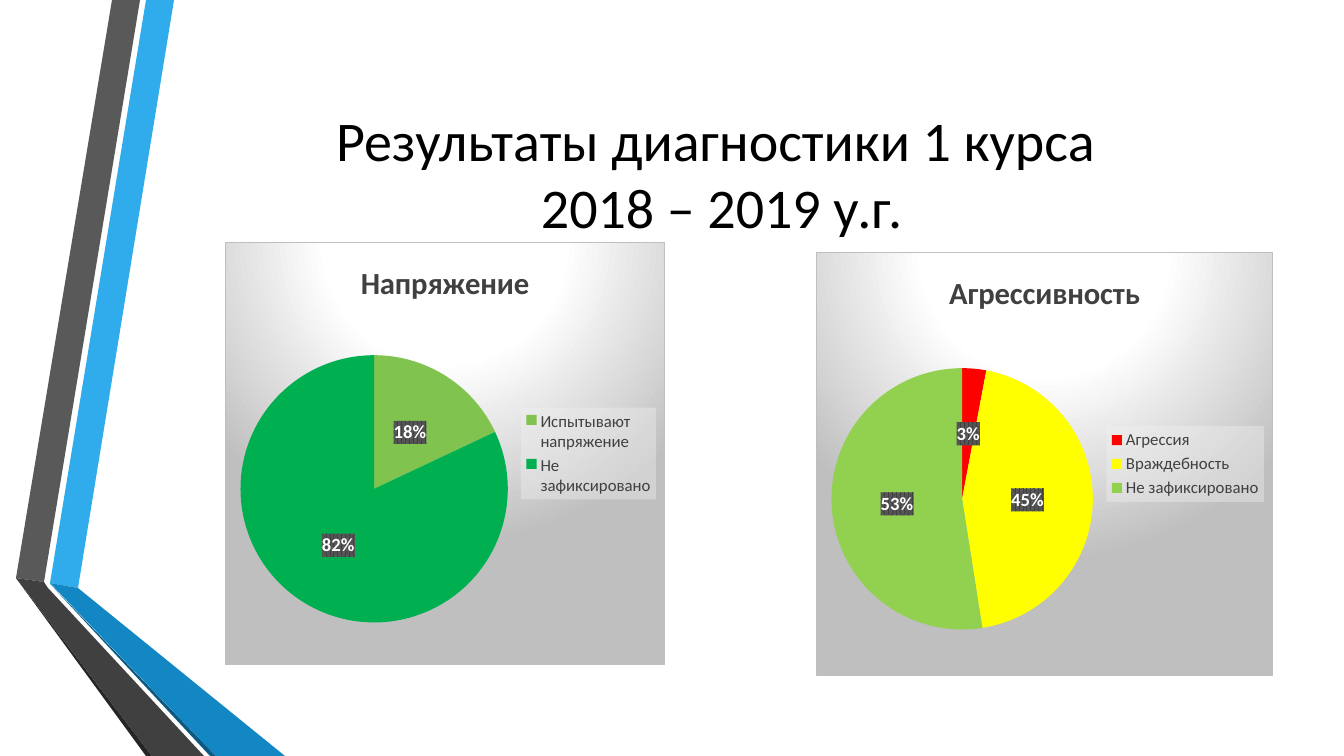
from dataclasses import dataclass
from lxml.etree import SubElement as Sub
from pptx import Presentation
from pptx.chart.data import CategoryChartData as Data
from pptx.dml.color import RGBColor as RGB
from pptx.enum.chart import XL_CHART_TYPE as Kind
from pptx.enum.chart import XL_LABEL_POSITION as Spot
from pptx.enum.chart import XL_LEGEND_POSITION as Side
from pptx.enum.text import MSO_ANCHOR as Anchor
from pptx.enum.text import PP_ALIGN as Align
from pptx.oxml import parse_xml
from pptx.oxml.ns import nsdecls, qn
from pptx.util import Pt

SCALE = 914400 / 100.8  # EMU in one px


@dataclass(frozen=True)
class Theme:
    face: str = "Calibri"
    ink: str = "000000"
    text: str = "404040"
    pale: str = "FFFFFF"
    edge: str = "BFBFBF"
    tile: str = "F2F2F2"
    weave: str = "595959"
    title: float = 40
    head: float = 22
    label: float = 13.3
    key: float = 12


T = Theme()


def px(n):
    return round(n * SCALE)


def style(font, size, color, bold=False):
    font.name, font.size, font.bold = T.face, Pt(size), bold
    font.color.rgb = RGB.from_string(color)


def paint(color):
    return f'<a:srgbClr val="{color}"/>'


def props(after, body):
    """Put shape properties straight after a chart element."""
    after.addnext(parse_xml(f'<c:spPr {nsdecls("c", "a")}>{body}</c:spPr>'))


# Ribbons along the left edge: colour, outline relative to the box
BANDS = [
    ("30ACEC", [(50, 583), (78, 588), (174, 0), (146, 0)]),
    ("595959", [(140, 0), (112, 0), (16, 578), (44, 582)]),
    ("262626", [(16, 578), (146, 756), (152, 756)]),
    ("0C5A82", [(50, 584), (210, 756), (216, 756)]),
    ("1287C3", [(50, 583), (216, 756), (285, 756), (78, 588)]),
    ("404040", [(204, 756), (48, 588), (44, 582), (16, 578), (152, 756)]),
]


def ribbon(slide, left, top):
    for color, dots in BANDS:
        dots = [(left + x, top + y) for x, y in dots]
        pen = slide.shapes.build_freeform(*dots[0], scale=SCALE)
        pen.add_line_segments(dots[1:], close=True)
        band = pen.convert_to_shape()
        band.shadow.inherit = False
        band.fill.solid()
        band.fill.fore_color.rgb = RGB.from_string(color)
        band.line.fill.background()


def heading(slide, box, lines):
    shape = slide.shapes.title
    shape.left, shape.top, shape.width, shape.height = map(px, box)
    frame = shape.text_frame
    frame.word_wrap, frame.vertical_anchor = True, Anchor.MIDDLE
    para = frame.paragraphs[0]
    para.alignment = Align.CENTER
    for i, line in enumerate(lines):
        if i:
            para.add_line_break()
        run = para.add_run()
        run.text = line
        style(run.font, T.title, T.ink)


def place(chart, box, disc):
    """Fix the pie: disc is left, top, side within the box."""
    area = chart.element.find(".//" + qn("c:plotArea"))
    old = area.find(qn("c:layout"))
    if old is not None:
        area.remove(old)
    left, top, side = disc
    spans = {"x": left / box[2], "y": top / box[3],
             "w": side / box[2], "h": side / box[3]}
    layout = parse_xml(f'<c:layout {nsdecls("c")}><c:manualLayout/></c:layout>')
    rules = [("layoutTarget", "inner"), ("xMode", "edge"), ("yMode", "edge")]
    for name, val in rules + [(k, f"{v:.4f}") for k, v in spans.items()]:
        Sub(layout[0], qn("c:" + name)).set("val", val)
    area.insert(0, layout)


def backs(chart):
    """Fill the panel, the legend and the label tiles."""
    stops = "".join(f'<a:gs pos="{at}">{paint(color)}</a:gs>' for at, color in
                    [(0, T.pale), (39000, T.pale), (100000, T.edge)])
    root = chart.element
    props(root.find(qn("c:chart")),
          f'<a:gradFill><a:gsLst>{stops}</a:gsLst><a:path path="circle">'
          '<a:fillToRect l="50000" t="-80000" r="50000" b="180000"/></a:path>'
          f'</a:gradFill><a:ln w="9525"><a:solidFill>{paint(T.edge)}'
          '</a:solidFill></a:ln>')
    props(root.find(".//" + qn("c:legend") + "/" + qn("c:overlay")),
          f'<a:solidFill><a:srgbClr val="{T.tile}"><a:alpha val="39000"/>'
          '</a:srgbClr></a:solidFill>')
    props(root.find(".//" + qn("c:ser") + "//" + qn("c:numFmt")),
          f'<a:pattFill prst="pct75"><a:fgClr>{paint(T.text)}</a:fgClr>'
          f'<a:bgClr>{paint(T.weave)}</a:bgClr></a:pattFill>')


def pie(slide, box, disc, name, parts):
    data = Data()
    data.categories = [part[0] for part in parts]
    data.add_series(name, [part[1] for part in parts])
    chart = slide.shapes.add_chart(Kind.PIE, *map(px, box), data).chart
    style(chart.font, 10, T.ink)

    # Chart title
    chart.has_title = True
    run = chart.chart_title.text_frame.paragraphs[0].add_run()
    run.text = name
    style(run.font, T.head, T.text, True)

    # Legend
    chart.has_legend = True
    key = chart.legend
    key.position, key.include_in_layout = Side.RIGHT, False
    style(key.font, T.key, T.text)

    # Slices and labels
    plot = chart.plots[0]
    plot.vary_by_categories = True
    row = plot.series[0]
    for i, part in enumerate(parts):
        fill = row.points[i].format.fill
        fill.solid()
        fill.fore_color.rgb = RGB.from_string(part[2])
    tags = row.data_labels
    tags.show_value = True
    tags.number_format, tags.number_format_is_linked = '0"%"', False
    tags.position = Spot.CENTER
    style(tags.font, T.label, T.pale, True)

    place(chart, box, disc)
    backs(chart)


def main():
    deck = Presentation()
    deck.slide_width, deck.slide_height = px(1344), px(756)
    slide = deck.slides.add_slide(deck.slide_layouts[5])
    ribbon(slide, 0, 0)
    heading(slide, (163, 76, 1105, 194),
            ["Результаты диагностики 1 курса", " 2018 – 2019 у.г."])
    pie(slide, (225, 242, 440, 423), (15, 113, 268), "Напряжение",
        [("Испытывают напряжение", 18, "80C34F"),
         ("Не зафиксировано", 82, "00B050")])
    pie(slide, (816, 252, 457, 424), (15, 116, 262), "Агрессивность",
        [("Агрессия", 3, "FF0000"), ("Враждебность", 45, "FFFF00"),
         ("Не зафиксировано", 53, "92D050")])
    deck.save("out.pptx")


if __name__ == "__main__":
    main()
